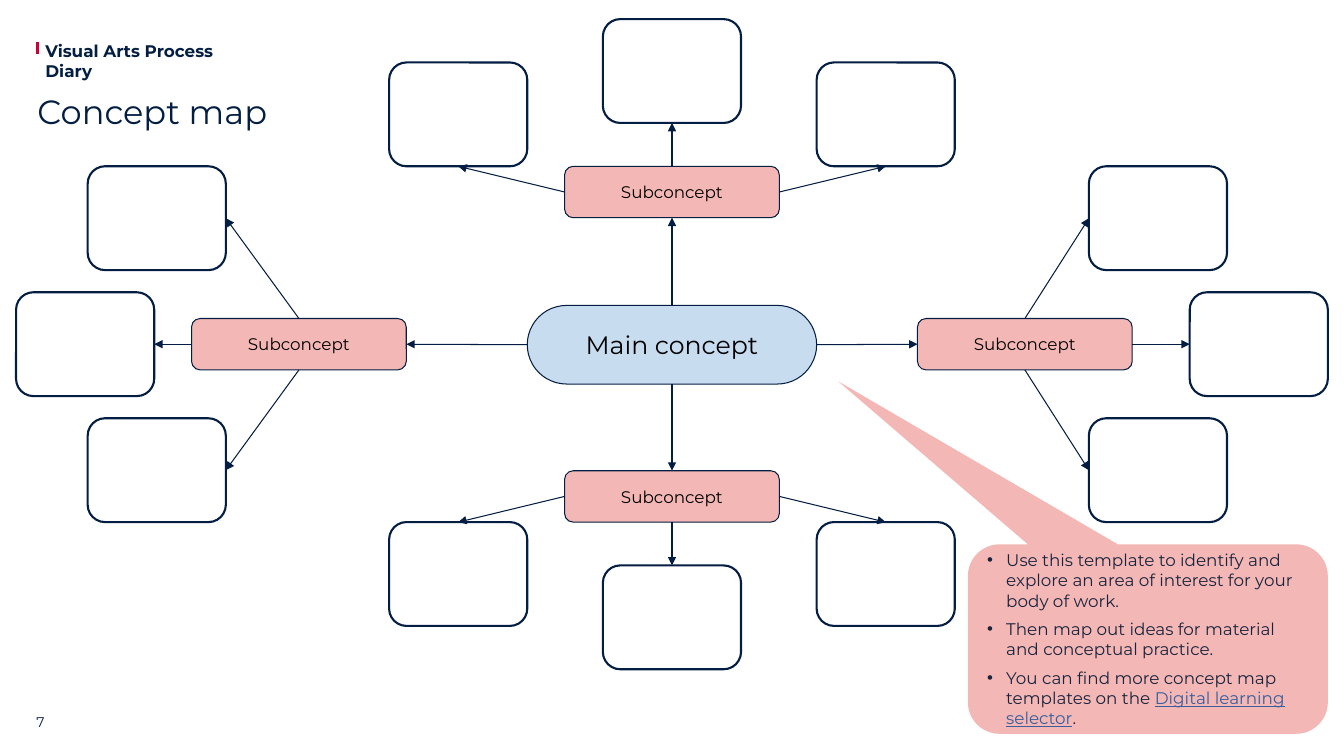
"""Build the concept map slide of a visual arts process diary."""
from lxml import etree
from pptx import Presentation
from pptx.dml.color import RGBColor
from pptx.enum.shapes import MSO_CONNECTOR, MSO_SHAPE
from pptx.enum.text import MSO_ANCHOR, PP_ALIGN
from pptx.oxml.ns import qn
from pptx.util import Inches, Pt

STRAIGHT = MSO_CONNECTOR.STRAIGHT
ROUNDED = MSO_SHAPE.ROUNDED_RECTANGLE
CALLOUT = MSO_SHAPE.ROUNDED_RECTANGULAR_CALLOUT
TOP, MIDDLE, BOTTOM = MSO_ANCHOR.TOP, MSO_ANCHOR.MIDDLE, MSO_ANCHOR.BOTTOM
LEFT, CENTER = PP_ALIGN.LEFT, PP_ALIGN.CENTER

NAVY = RGBColor(0x04, 0x1E, 0x42)
OUTLINE = RGBColor(0x04, 0x1D, 0x42)
RED = RGBColor(0xCE, 0x00, 0x37)
BLUE = RGBColor(0xC8, 0xDC, 0xF0)
PINK = RGBColor(0xF3, 0xB8, 0xB5)
WHITE = RGBColor(0xFF, 0xFF, 0xFF)
BLACK = RGBColor(0x00, 0x00, 0x00)
INK = RGBColor(0x19, 0x23, 0x3E)
LINK = RGBColor(0x38, 0x5E, 0x9D)

SITE_TOP, SITE_LEFT, SITE_BOTTOM, SITE_RIGHT = range(4)
SUBCONCEPT_SIZE = (2.13, 0.51)
IDEA_SIZE = (1.37, 1.03)

# Each branch: subconcept corner, side facing the centre, idea corners by side
BRANCHES = (
    ((1.9, 3.16), SITE_RIGHT, ((0.87, 1.65), (0.16, 2.9), (0.87, 4.15))),
    ((9.1, 3.16), SITE_LEFT, ((10.8, 1.65), (10.8, 4.15), (11.8, 2.9))),
    ((5.6, 1.65), SITE_BOTTOM, ((5.98, 0.19), (3.86, 0.62), (8.1, 0.62))),
    ((5.6, 4.67), SITE_TOP, ((3.86, 5.18), (5.98, 5.61), (8.1, 5.18))),
)

ADVICE = (
    (("Use this template to identify and explore an area of interest "
      "for your body of work.", False),),
    (("Then map out ideas for material and conceptual practice.", False),),
    (("You can find more concept map templates on the ", False),
     ("Digital learning selector", True), (".", False)),
)


class ConceptMap:
    """Draws the elements of the map on one slide in a shared style."""

    font = "Montserrat"

    def __init__(self, slide):
        self.shapes = slide.shapes

    def style(self, paragraph, size, color, align=LEFT, bold=False):
        """Set the font and alignment of a paragraph."""
        paragraph.alignment = align
        font = paragraph.font
        font.name, font.size, font.bold = self.font, Pt(size), bold
        font.color.rgb = color

    def label(self, text, box, size, anchor=TOP, bold=False, spacing=1.0):
        """Add plain text without margins."""
        frame = self.shapes.add_textbox(*map(Inches, box)).text_frame
        frame.word_wrap = True
        frame.vertical_anchor = anchor
        frame.margin_left = frame.margin_right = 0
        frame.margin_top = frame.margin_bottom = 0
        paragraph = frame.paragraphs[0]
        paragraph.text = text
        paragraph.line_spacing = spacing
        self.style(paragraph, size, NAVY, bold=bold)

    def node(self, corner, extent, fill, weight, text="", size=12, radius=0.167):
        """Add a rounded box with an optional centred caption."""
        node = self.shapes.add_shape(ROUNDED, *map(Inches, corner + extent))
        node.shadow.inherit = False
        node.adjustments[0] = radius
        node.fill.solid()
        node.fill.fore_color.rgb = fill
        node.line.color.rgb = OUTLINE
        node.line.width = Pt(weight)
        if text:
            node.text_frame.vertical_anchor = MIDDLE
            caption = node.text_frame.paragraphs[0]
            caption.text = text
            self.style(caption, size, BLACK, CENTER)
        return node

    def line(self, start, end, color, weight):
        """Add a straight line without a shadow."""
        line = self.shapes.add_connector(STRAIGHT, *map(Inches, start + end))
        line.line.color.rgb = color
        line.line.width = Pt(weight)
        etree.SubElement(line._element.spPr, qn("a:effectLst"))
        return line

    def arrow(self, source, source_site, target, target_site):
        """Join two nodes by an arrow between connection sites."""
        arrow = self.line((0, 0), (1, 1), OUTLINE, 0.75)
        arrow.begin_connect(source, source_site)
        arrow.end_connect(target, target_site)
        outline = arrow.line._get_or_add_ln()
        etree.SubElement(outline, qn("a:tailEnd"), type="triangle")

    def branch(self, main, corner, inner, idea_corners):
        """Add a subconcept with its ideas and arrows."""
        subconcept = self.node(corner, SUBCONCEPT_SIZE, PINK, 0.75, "Subconcept")
        self.arrow(main, (inner + 2) % 4, subconcept, inner)
        outer_sites = [site for site in range(4) if site != inner]
        for site, idea_corner in zip(outer_sites, idea_corners):
            idea = self.node(idea_corner, IDEA_SIZE, WHITE, 1.5)
            self.arrow(subconcept, site, idea, inner)

    def callout(self, box, adjustments, items):
        """Add a speech bubble with a bulleted list."""
        bubble = self.shapes.add_shape(CALLOUT, *map(Inches, box))
        bubble.shadow.inherit = False
        for index, value in enumerate(adjustments):
            bubble.adjustments[index] = value
        bubble.fill.solid()
        bubble.fill.fore_color.rgb = PINK
        bubble.line.fill.background()
        frame = bubble.text_frame
        frame.vertical_anchor = MIDDLE
        for index, item in enumerate(items):
            paragraph = frame.add_paragraph() if index else frame.paragraphs[0]
            self.style(paragraph, 12, INK)
            paragraph.space_after = Pt(6)
            properties = paragraph._p.get_or_add_pPr()
            properties.set("marL", str(Inches(0.19)))
            properties.set("indent", str(-Inches(0.19)))
            bullet_font = etree.Element(qn("a:buFont"), typeface="Arial")
            bullet = etree.Element(qn("a:buChar"), char="•")
            defaults = properties.find(qn("a:defRPr"))
            defaults.addprevious(bullet_font)
            defaults.addprevious(bullet)
            for text, linked in item:
                run = paragraph.add_run()
                run.text = text
                if linked:
                    run.font.color.rgb = LINK
                    run.font.underline = True


def main():
    """Create the slide and save it."""
    deck = Presentation()
    deck.slide_width, deck.slide_height = Inches(13.33), Inches(7.5)
    concept_map = ConceptMap(deck.slides.add_slide(deck.slide_layouts[6]))

    concept_map.line((0.37, 0.42), (0.37, 0.54), RED, 2.5)
    concept_map.label("Visual Arts Process Diary", (0.45, 0.4, 2.15, 0.4), 12, bold=True)
    concept_map.label("7", (0.36, 6.85, 0.45, 0.4), 10, BOTTOM)
    concept_map.label("Concept map", (0.37, 0.85, 12.61, 0.55), 24, MIDDLE, spacing=0.9)

    main_concept = concept_map.node(
        (5.23, 3.03), (2.87, 0.78), BLUE, 0.75, "Main concept", 18, 0.5)
    for corner, inner, idea_corners in BRANCHES:
        concept_map.branch(main_concept, corner, inner, idea_corners)

    concept_map.callout((9.6, 5.4, 3.57, 1.88), (-0.86, -1.36, 0.167), ADVICE)
    deck.save("out.pptx")


if __name__ == "__main__":
    main()
